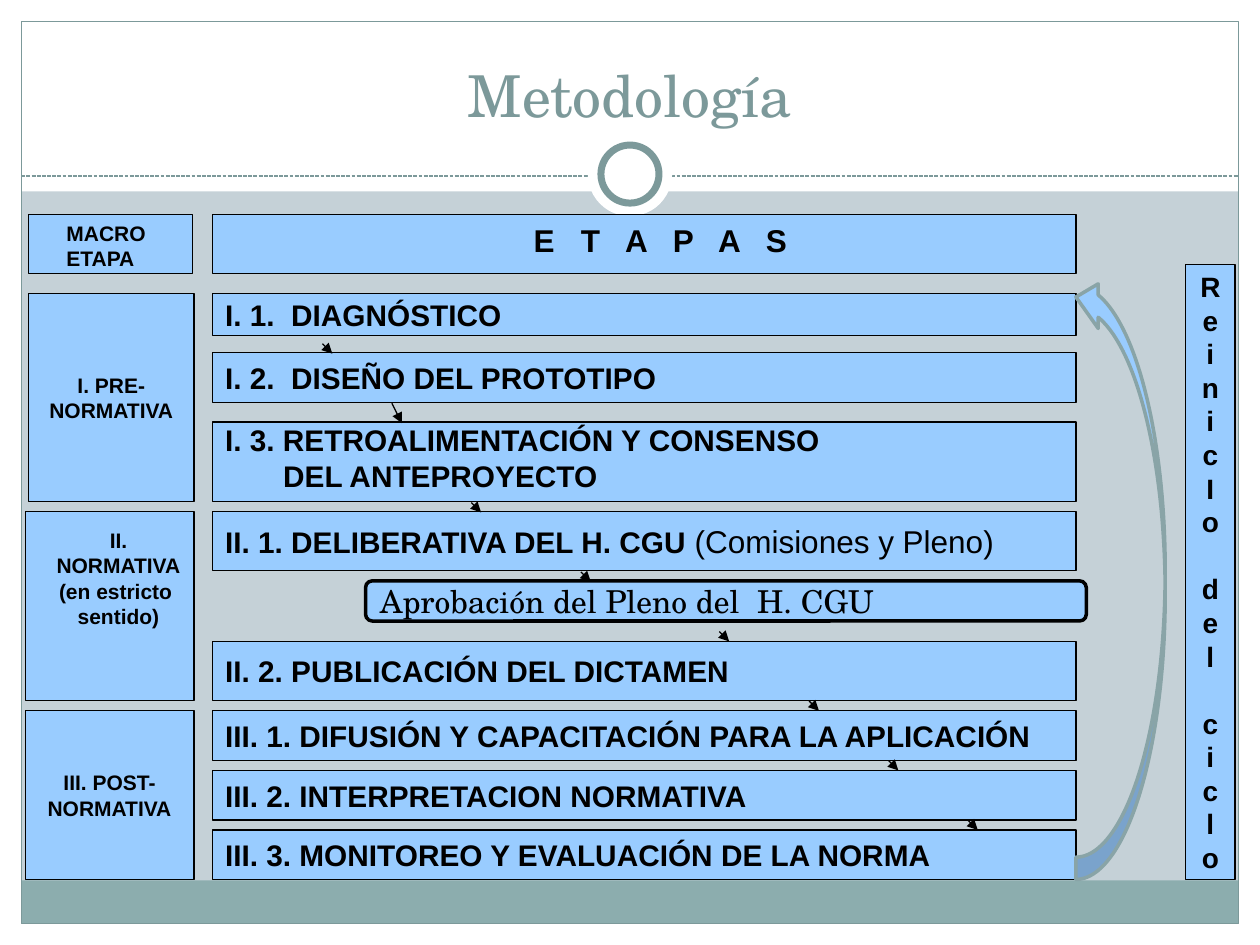
from lxml import etree
from pptx import Presentation
from pptx.dml.color import RGBColor
from pptx.enum.dml import MSO_LINE
from pptx.enum.shapes import MSO_CONNECTOR, MSO_SHAPE
from pptx.enum.text import MSO_ANCHOR, PP_ALIGN
from pptx.oxml.ns import qn
from pptx.util import Cm, Pt

RECTANGLE, ROUNDED = MSO_SHAPE.RECTANGLE, MSO_SHAPE.ROUNDED_RECTANGLE
OVAL, CURVED_ARROW = MSO_SHAPE.OVAL, MSO_SHAPE.CURVED_LEFT_ARROW
STRAIGHT, DASH = MSO_CONNECTOR.STRAIGHT, MSO_LINE.SQUARE_DOT
TOP, MIDDLE, BOTTOM = MSO_ANCHOR.TOP, MSO_ANCHOR.MIDDLE, MSO_ANCHOR.BOTTOM
LEFT, CENTER = PP_ALIGN.LEFT, PP_ALIGN.CENTER
COLORS = {"background": "C5D1D7", "white": "FFFFFF", "footer": "8CADAE",
          "frame": "7C999A", "box": "99CCFF", "arrow": "89A4A7", "black": "000000"}
SANS, SERIF = "Arial", "TeX Gyre Schola"
INSETS = (0.25, 0.13, 0.25, 0.13)
STAGE_LEFT, STAGE_WIDTH = 4.29, 17.4
HANGING = 1.17


def color(name):
    """Return the named colour."""
    return RGBColor.from_string(COLORS[name])


def add_box(slide, box, fill="box", line="black", width=0.75, kind=RECTANGLE):
    """Add a shape in a box given in centimetres as left, top, width, height."""
    shape = slide.shapes.add_shape(kind, *map(Cm, box))
    shape.shadow.inherit = False
    if fill:
        shape.fill.solid()
        shape.fill.fore_color.rgb = color(fill)
    else:
        shape.fill.background()
    if line:
        shape.line.color.rgb = color(line)
        shape.line.width = Pt(width)
    else:
        shape.line.fill.background()
    return shape


def add_line(slide, start, end, line="black"):
    """Add a thin straight connector without shadow."""
    connector = slide.shapes.add_connector(STRAIGHT, *map(Cm, start + end))
    connector.line.color.rgb = color(line)
    connector.line.width = Pt(0.75)
    etree.SubElement(connector._element.spPr, qn("a:effectLst"))
    return connector


def add_run(paragraph, text, size, bold=True, font=SANS, ink="black"):
    """Add one formatted run to a paragraph."""
    run = paragraph.add_run()
    run.text = text
    run.font.size, run.font.bold, run.font.name = Pt(size), bold, font
    run.font.color.rgb = color(ink)
    return run


def write(shape, lines, size, align=LEFT, anchor=MIDDLE, insets=INSETS, **style):
    """Write one paragraph per line and return the paragraphs."""
    frame = shape.text_frame
    frame.word_wrap = True
    frame.vertical_anchor = anchor
    frame.margin_left, frame.margin_top, frame.margin_right, frame.margin_bottom = map(Cm, insets)
    for index, line in enumerate(lines):
        paragraph = frame.add_paragraph() if index else frame.paragraphs[0]
        paragraph.alignment = align
        if len(lines) > 1:
            paragraph.line_spacing = Pt(round(size * 1.2, 1))
        add_run(paragraph, line, size, **style)
    return frame.paragraphs


def add_frame(slide, width, height):
    """Draw the white margins, the footer band, the border and the ring."""
    margin, header = 0.43, 3.86
    inner = width - 2 * margin
    for box in ((0, height - margin, width, margin), (0, 0, width, header),
                (0, 0, margin, height), (width - margin, 0, margin, height)):
        add_box(slide, box, "white", None)
    add_box(slide, (margin, 17.75, inner, 0.87), "footer", None)
    add_box(slide, (margin, margin, inner, height - 2 * margin), None, "frame")
    divider = add_line(slide, (margin, 3.55), (width - margin, 3.55), "frame")
    divider.line.dash_style = DASH
    for diameter, line in ((1.7, None), (1.17, "frame")):
        ring = ((width - diameter) / 2, 3.51 - diameter / 2, diameter, diameter)
        add_box(slide, ring, "white", line, 4, OVAL)


def add_title(slide, box):
    """Place the title in front of the frame."""
    title = slide.shapes.title
    slide.shapes._spTree.append(title._element)
    title.left, title.top, title.width, title.height = map(Cm, box)
    write(title, ["Metodología"], 33, CENTER, BOTTOM, bold=False, font=SERIF, ink="frame")


def add_macro_stages(slide):
    """Add the left column with the macro stages."""
    macro_stages = (
        ((0.58, 4.32, 3.3, 1.19), ["MACRO", "ETAPA"], LEFT, TOP, (0.76, 0.13, 0, 0)),
        ((0.58, 5.92, 3.33, 4.19), ["I. PRE-", "NORMATIVA"], CENTER, MIDDLE, INSETS),
        ((0.51, 10.31, 3.4, 3.81), ["II. NORMATIVA", "(en estricto ", "sentido)"],
         CENTER, TOP, (0.43, 0.33, 0.07, 0)),
        ((0.51, 14.33, 3.4, 3.4), ["III. POST-", "NORMATIVA"], CENTER, MIDDLE, INSETS),
    )
    for box, lines, align, anchor, insets in macro_stages:
        write(add_box(slide, box), lines, 12, align, anchor, insets)


def add_stage(slide, top, height, lines, size=17, **layout):
    """Add one stage bar and return its paragraphs."""
    bar = add_box(slide, (STAGE_LEFT, top, STAGE_WIDTH, height))
    return write(bar, lines, size, **layout)


def add_stages(slide):
    """Add the heading, the stage bars and the approval box."""
    heading = add_stage(slide, 4.32, 1.19, ["E T A P A S"], 18,
                        anchor=TOP, insets=(6.47, 0.13, 0, 0))
    heading[0].runs[0]._r.get_or_add_rPr().set("spc", "500")
    for top, height, text in (
        (5.92, 0.84, "I. 1.  DIAGNÓSTICO"),
        (7.11, 1, "I. 2.  DISEÑO DEL PROTOTIPO"),
        (12.93, 1.19, "II. 2. PUBLICACIÓN DEL DICTAMEN"),
        (14.33, 1, "III. 1. DIFUSIÓN Y CAPACITACIÓN PARA LA APLICACIÓN"),
        (15.53, 1, "III. 2. INTERPRETACION NORMATIVA"),
        (16.73, 1, "III. 3. MONITOREO Y EVALUACIÓN DE LA NORMA"),
    ):
        add_stage(slide, top, height, [text])
    feedback = add_stage(slide, 8.51, 1.6,
                         ["I. 3. RETROALIMENTACIÓN Y CONSENSO", "DEL ANTEPROYECTO"],
                         anchor=TOP, insets=(0.25, 0, 0.25, 0))
    feedback[1]._p.get_or_add_pPr().set("marL", str(Cm(HANGING)))
    deliberation = add_stage(slide, 10.31, 1.19, ["II. 1. DELIBERATIVA DEL H. CGU "])
    add_run(deliberation[0], "(Comisiones y Pleno)", 18, bold=False)
    approval = add_box(slide, (7.37, 11.71, 14.53, 0.81), width=2, kind=ROUNDED)
    write(approval, ["Aprobación del Pleno del  H. CGU"], 18,
          insets=(0.25, 0, 0.25, 0), bold=False, font=SERIF)


def add_step_arrows(slide):
    """Add the short arrows that lead from each stage to the next."""
    for left, top, drop in ((6.5, 6.93, 0.2), (7.9, 8.13, 0.4), (9.5, 10.13, 0.2),
                            (11.71, 11.53, 0.2), (14.5, 12.73, 0.2), (16.31, 14.13, 0.2),
                            (17.91, 15.33, 0.2), (19.51, 16.53, 0.2)):
        arrow = add_line(slide, (left, top), (left + 0.2, top + drop))
        etree.SubElement(arrow.line._get_or_add_ln(), qn("a:tailEnd"), type="triangle")


def add_cycle(slide):
    """Add the return arrow and the upright bar that names it."""
    arrow = add_box(slide, (21.69, 5.54, 1.8, 12.19), line="arrow", width=2, kind=CURVED_ARROW)
    arrow._element.spPr.find(qn("a:xfrm")).set("flipV", "1")
    bar = add_box(slide, (23.9, 5.33, 1, 12.4))
    words = ("ReinicIo", "del", "ciclo")
    paragraphs = write(bar, "".join(words), 16, CENTER, insets=(0, 0, 0, 0))
    for start in (len(words[0]), len(words[0] + words[1])):
        paragraphs[start].space_before = Pt(19.2)


def main():
    """Build the slide and save it."""
    presentation = Presentation()
    width, height = 25.4, 19.05
    presentation.slide_width, presentation.slide_height = Cm(width), Cm(height)
    slide = presentation.slides.add_slide(presentation.slide_layouts[5])
    slide.background.fill.solid()
    slide.background.fill.fore_color.rgb = color("background")
    add_frame(slide, width, height)
    add_title(slide, (0.85, 0.64, 23.7, 2.1))
    add_macro_stages(slide)
    add_stages(slide)
    add_step_arrows(slide)
    add_cycle(slide)
    presentation.save("out.pptx")


if __name__ == "__main__":
    main()
